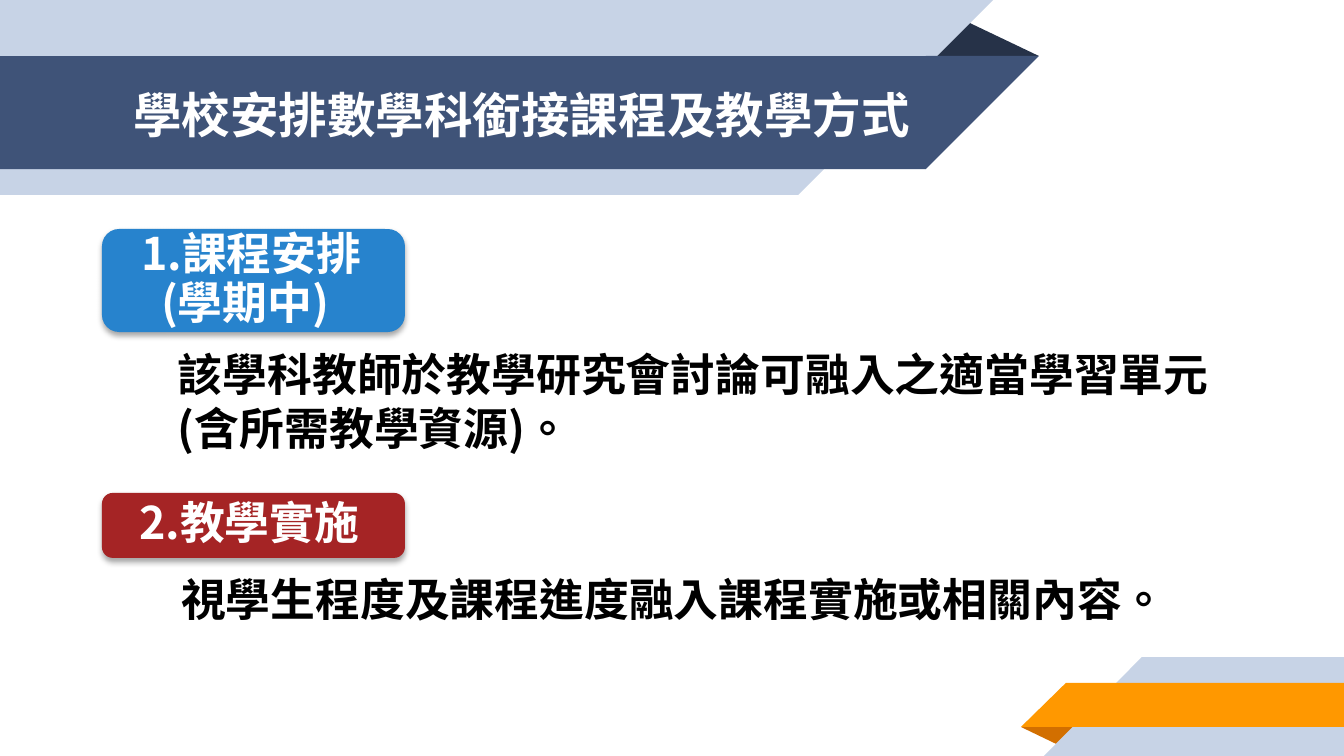
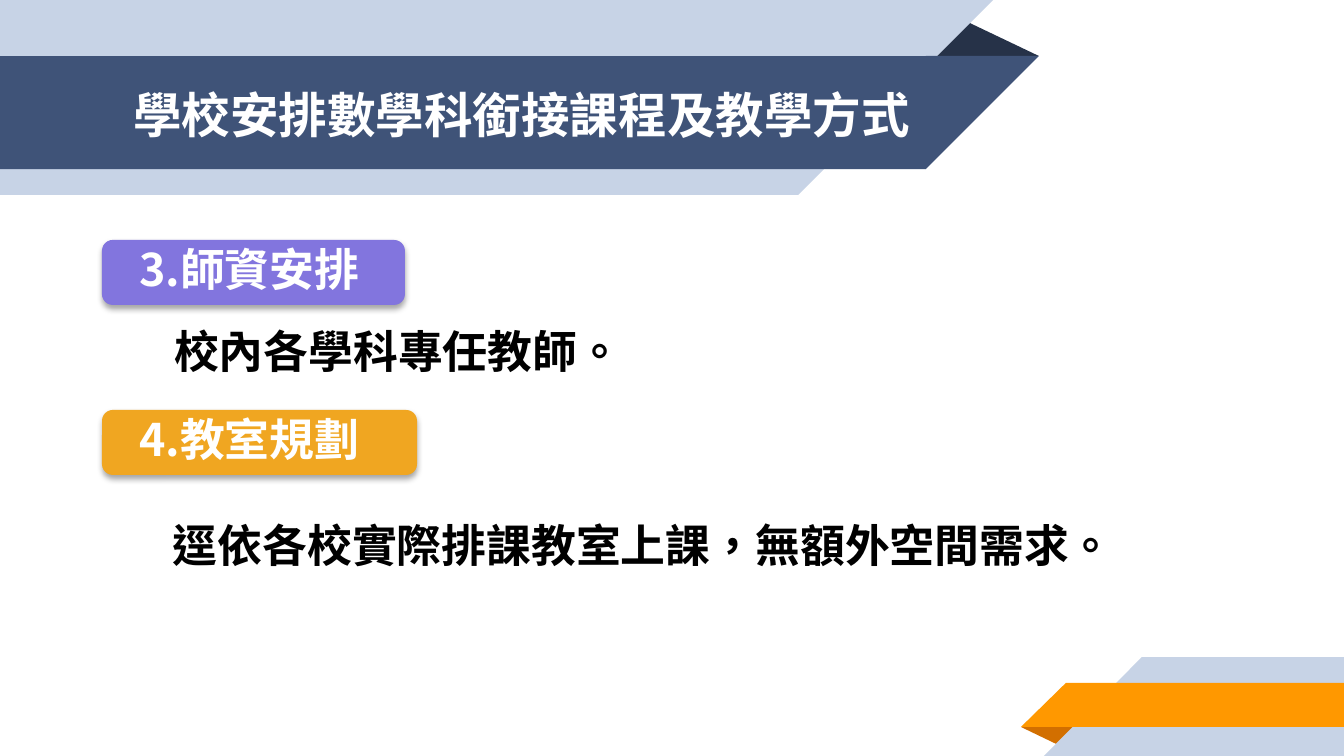
from dataclasses import dataclass
from lxml.etree import SubElement
from pptx import Presentation
from pptx.dml.color import RGBColor
from pptx.enum.shapes import MSO_SHAPE
from pptx.enum.text import MSO_ANCHOR, MSO_AUTO_SIZE, PP_ALIGN
from pptx.oxml.ns import qn
from pptx.util import Pt

PX = 9144000 / 1344  # EMU in one px


@dataclass(frozen=True)
class Theme:
    font: str = "Noto Sans CJK SC"
    pale: str = "C7D3E6"
    navy: str = "3F5378"
    night: str = "263248"
    gold: str = "FF9800"
    rust: str = "D26F00"
    blue: str = "2783CD"
    red: str = "A52425"
    violet: str = "8275DE"
    amber: str = "F0A621"
    white: str = "FFFFFF"
    black: str = "000000"
    head: int = 26
    text: int = 24


theme = Theme()


def draw(slide, kind, box, color):
    shape = slide.shapes.add_shape(kind, *[round(v * PX) for v in box])
    shape.shadow.inherit = False
    shape.fill.solid()
    shape.fill.fore_color.rgb = RGBColor.from_string(color)
    shape.line.fill.background()
    return shape


def write(shape, text, size=theme.text, color=theme.black, anchor=MSO_ANCHOR.TOP,
          inset=(13, 7, 13, 7), wrap=True, fit=MSO_AUTO_SIZE.NONE, space=1.0):
    frame = shape.text_frame
    frame.text = text
    frame.word_wrap, frame.auto_size = wrap, fit
    frame.vertical_anchor = anchor
    sides = [round(v * PX) for v in inset]
    frame.margin_left, frame.margin_top, frame.margin_right, frame.margin_bottom = sides
    for para in frame.paragraphs:
        para.alignment = PP_ALIGN.LEFT
        para.line_spacing = space
        for run in para.runs:
            run.font.name, run.font.size, run.font.bold = theme.font, Pt(size), True
            run.font.color.rgb = RGBColor.from_string(color)
    # East Asian face and language
    for prop in shape.element.iter(qn("a:rPr")):
        prop.set("lang", "zh-TW")
        SubElement(prop, qn("a:ea"), typeface=theme.font)
    return frame


# Content: tags are (text, box, color), notes are (text, box)
title = "學校安排數學科銜接課程及教學方式"
pages = [
    ([("1.課程安排\n(學期中)", (102, 229, 303, 103), theme.blue),
      ("2.教學實施", (102, 493, 303, 65), theme.red)],
     [("該學科教師於教學研究會討論可融入之適當學習單元\v(含所需教學資源)。",
       (165, 340, 1067, 121)),
      ("視學生程度及課程進度融入課程實施或相關內容。", (168, 565, 1023, 67))]),
    ([("3.師資安排", (102, 240, 303, 65), theme.violet),
      ("4.教室規劃", (102, 410, 315, 65), theme.amber)],
     [("校內各學科專任教師。", (161, 317, 480, 67)),
      ("逕依各校實際排課教室上課，無額外空間需求。", (160, 511, 977, 67))]),
]

# Ribbons: kind, box, color, turn, flip
rect, wedge, fold = MSO_SHAPE.RECTANGLE, MSO_SHAPE.RIGHT_TRIANGLE, MSO_SHAPE.ISOSCELES_TRIANGLE
bands = [
    (fold, (925, 19, 114, 37), theme.night, 0, False),
    (rect, (0, 0, 798, 195), theme.pale, 180, True),
    (wedge, (798, 0, 195, 195), theme.pale, 180, True),
    (rect, (0, 56, 926, 113), theme.navy, 180, True),
    (wedge, (926, 56, 113, 113), theme.navy, 180, True),
    (fold, (1021, 727, 58, 19), theme.rust, 180, False),
    (rect, (1142, 657, 202, 99), theme.pale, 0, True),
    (wedge, (1044, 657, 98, 99), theme.pale, 0, True),
    (rect, (1066, 683, 278, 44), theme.gold, 0, True),
    (wedge, (1021, 683, 45, 44), theme.gold, 0, True),
]

deck = Presentation()
deck.slide_width, deck.slide_height = round(1344 * PX), round(756 * PX)
base = deck.slide_layouts[5]
slides = [deck.slides.add_slide(base) for _ in pages]

# Keep only the title on the layout
for holder in list(base.placeholders):
    if holder.placeholder_format.idx != 0:
        holder.element.getparent().remove(holder.element)

# Ribbons go behind the title on the shared layout
for n, (kind, box, color, turn, flip) in enumerate(bands):
    band = draw(slides[0], kind, box, color)
    band.rotation = turn
    if kind == fold:
        band.adjustments[0] = 0.32
    if flip:
        band.element.spPr.find(qn("a:xfrm")).set("flipH", "1")
    next(band.element.iter(qn("p:cNvPr"))).set("id", str(20 + n))
    base.shapes.element.insert(2 + n, band.element)

for slide, (tags, notes) in zip(slides, pages):
    # Title
    head = slide.shapes.title
    head.left, head.top, head.width, head.height = [
        round(v * PX) for v in (120, 58, 817, 113)]
    write(head, title, size=theme.head, color=theme.white,
          anchor=MSO_ANCHOR.MIDDLE, inset=(13, 13, 13, 13))

    # Body text
    for text, box in notes:
        note = slide.shapes.add_textbox(*[round(v * PX) for v in box])
        write(note, text, wrap=False, fit=MSO_AUTO_SIZE.SHAPE_TO_FIT_TEXT)

    # Rounded tags with a soft shadow
    for text, box, color in tags:
        tag = draw(slide, MSO_SHAPE.ROUNDED_RECTANGLE, box, color)
        glow = SubElement(tag.element.spPr.find(qn("a:effectLst")), qn("a:outerShdw"),
                          blurRad="40000", dist="23000", dir="5400000", rotWithShape="0")
        tint = SubElement(glow, qn("a:srgbClr"), val=theme.black)
        SubElement(tint, qn("a:alpha"), val="35000")
        frame = write(tag, text, color=theme.white, anchor=MSO_ANCHOR.MIDDLE,
                      inset=(34, 0, 8, 0), space=0.9)
        # Second lines are indented
        for para in frame.paragraphs[1:]:
            para.level = 0
        for prop in list(tag.element.iter(qn("a:pPr")))[1:]:
            prop.set("marL", str(round(20 * PX)))

deck.save("out.pptx")
